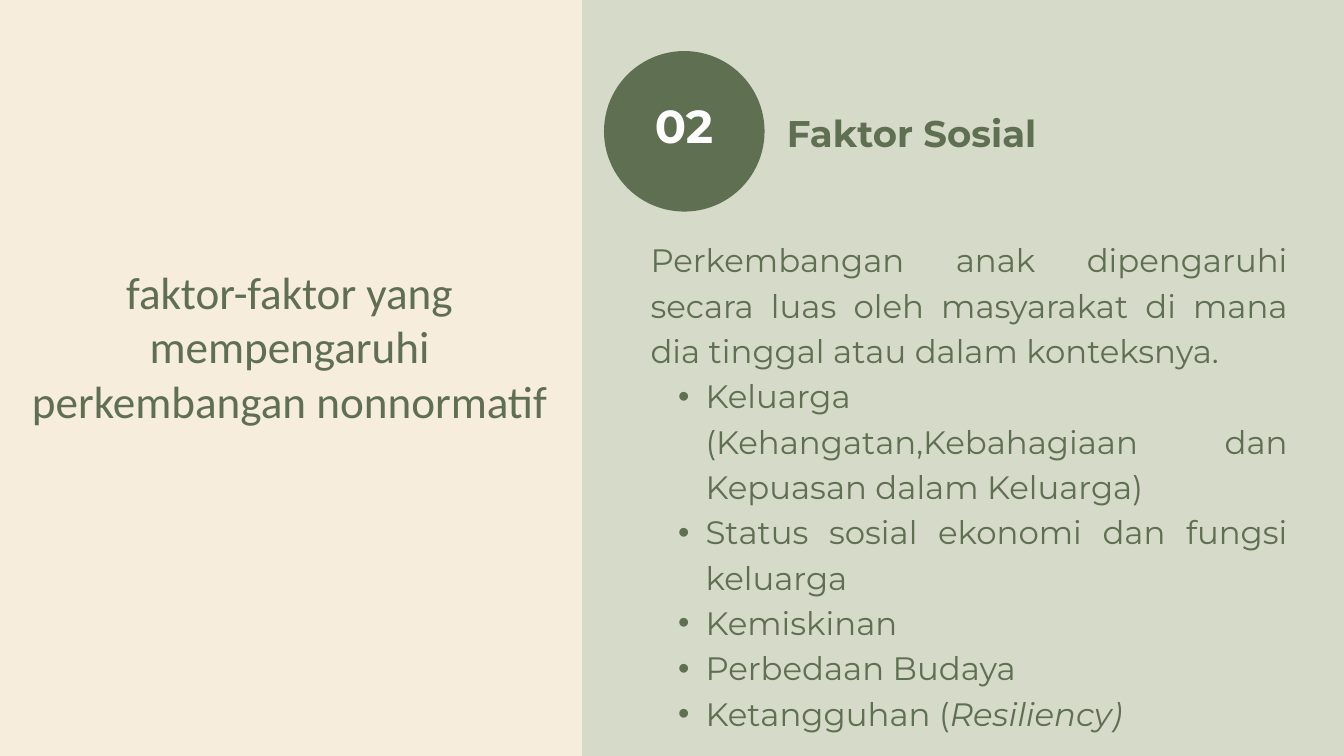
"""Build the slide on social factors in non-normative development."""
from lxml import etree
from pptx import Presentation
from pptx.dml.color import RGBColor
from pptx.enum.shapes import MSO_SHAPE
from pptx.enum.text import MSO_ANCHOR, PP_ALIGN
from pptx.oxml.ns import qn
from pptx.util import Cm, Pt

RECT, OVAL = MSO_SHAPE.RECTANGLE, MSO_SHAPE.OVAL
TOP, MIDDLE = MSO_ANCHOR.TOP, MSO_ANCHOR.MIDDLE
CENTER, JUSTIFY = PP_ALIGN.CENTER, PP_ALIGN.JUSTIFY

COLORS = {"cream": "F6EDDD", "sage": "D6DAC8", "green": "5F6F52", "white": "FFFFFF"}

SHAPES = [
    (RECT, (22, -0.76, 29.29, 29.69), "sage"),
    (OVAL, (22.83, 1.93, 6.07, 6.07), "green"),
]

NUMBER = ["02"]
TITLE = ["faktor-faktor yang mempengaruhi perkembangan nonnormatif"]
HEADING = ["Faktor Sosial"]
INTRO = ["Perkembangan anak dipengaruhi secara luas oleh masyarakat "
         "di mana dia tinggal atau dalam konteksnya."]
FACTORS = [
    ["Keluarga (Kehangatan,Kebahagiaan dan Kepuasan dalam Keluarga)"],
    ["Status sosial ekonomi dan fungsi keluarga"],
    ["Kemiskinan"],
    ["Perbedaan Budaya"],
    ["Ketangguhan (", "Resiliency)"],
]

STYLES = {
    "number": {"name": "Montserrat", "size": Pt(49.5), "bold": True},
    "title": {"name": "Calibri", "size": Pt(48.4)},
    "body": {"name": "Montserrat", "size": Pt(34.7)},
    "heading": {"name": "Montserrat", "size": Pt(39.7), "bold": True},
}

TEXTS = [
    ((23.39, 1.7, 4.93, 5.72), "number", "white", CENTER, 69.3, MIDDLE, 0.15, [NUMBER], []),
    ((0.58, 9.96, 20.73, 8.23), "title", "green", CENTER, 58.5, TOP, 0, [TITLE], []),
    ((24.59, 8.84, 24.08, 16.87), "body", "green", JUSTIFY, 48.6, TOP, 0, [INTRO], FACTORS),
    ((29.74, 3.91, 21.54, 1.88), "heading", "green", JUSTIFY, 55.6, TOP, 0, [HEADING], []),
]


def rgb(name):
    return RGBColor.from_string(COLORS[name])


def set_attrs(obj, values):
    for key, value in values.items():
        setattr(obj, key, value)


def add_bullet(p):
    p.level = 1
    pPr = p._p.get_or_add_pPr()
    pPr.set("marL", str(Cm(2.08)))
    pPr.set("indent", str(Cm(-1.04)))
    etree.SubElement(pPr, qn("a:buFont")).set("typeface", "Arial")
    etree.SubElement(pPr, qn("a:buChar")).set("char", "•")


def add_shape(s, kind, box, color):
    sp = s.shapes.add_shape(kind, *map(Cm, box))
    sp.shadow.inherit = False
    sp.fill.solid()
    sp.fill.fore_color.rgb = rgb(color)
    sp.line.fill.background()


def add_text(s, box, style, color, align, spacing, anchor, inset, plain, bullets):
    tf = s.shapes.add_textbox(*map(Cm, box)).text_frame
    margins = {f"margin_{side}": Cm(inset) for side in ("left", "top", "right", "bottom")}
    set_attrs(tf, {"word_wrap": True, "vertical_anchor": anchor, **margins})
    for i, runs in enumerate(plain + bullets):
        p = tf.add_paragraph() if i else tf.paragraphs[0]
        set_attrs(p, {"alignment": align, "line_spacing": Pt(spacing)})
        if i >= len(plain):
            add_bullet(p)
        for j, text in enumerate(runs):
            r = p.add_run()
            r.text = text
            set_attrs(r.font, STYLES[style])
            r.font.color.rgb = rgb(color)
            if j:
                r.font.italic = True


def main():
    prs = Presentation()
    prs.slide_width, prs.slide_height = Cm(50.8), Cm(28.58)
    s = prs.slides.add_slide(prs.slide_layouts[6])
    s.background.fill.solid()
    s.background.fill.fore_color.rgb = rgb("cream")
    for shape in SHAPES:
        add_shape(s, *shape)
    for text in TEXTS:
        add_text(s, *text)
    prs.save("out.pptx")


if __name__ == "__main__":
    main()
